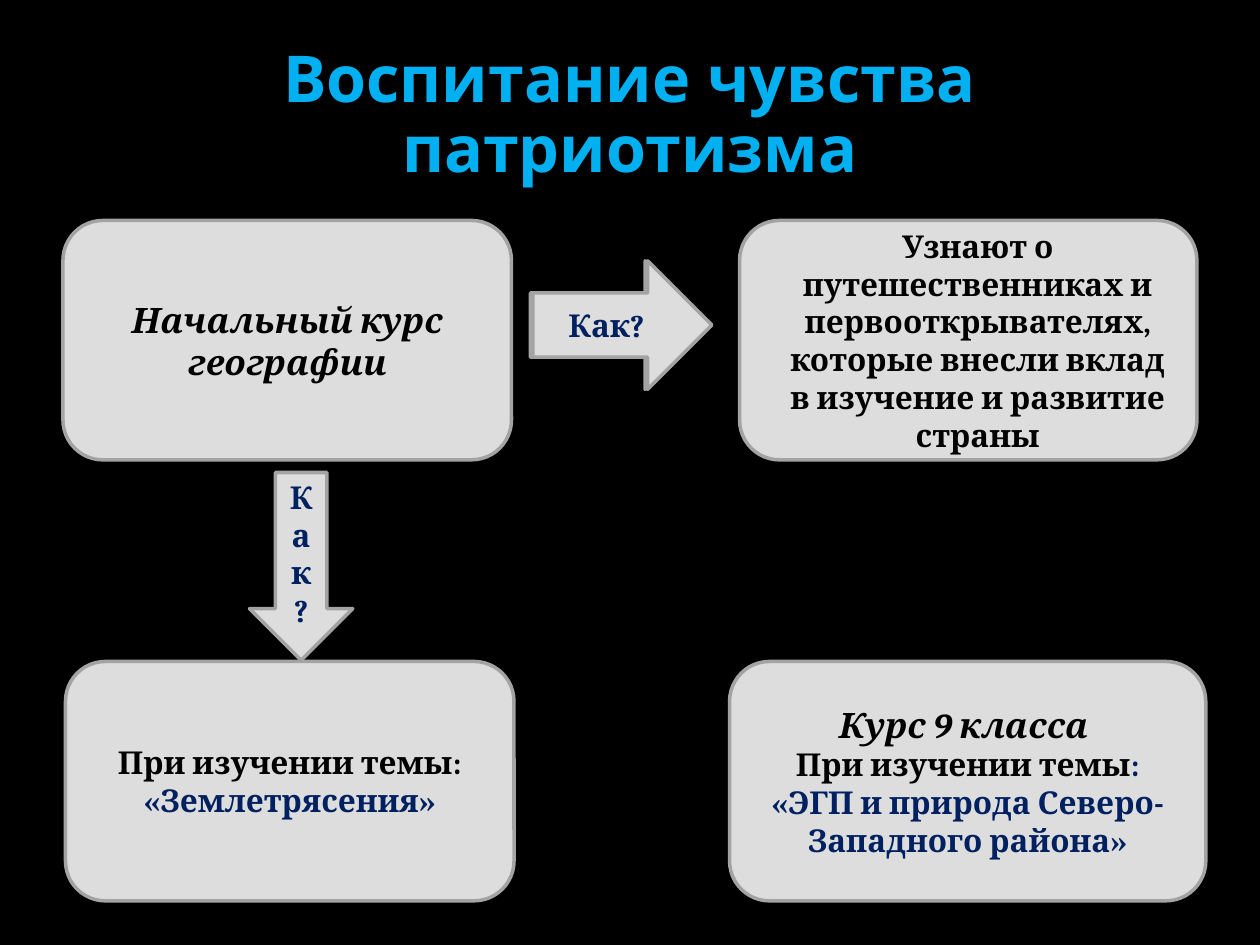
from dataclasses import dataclass

from pptx import Presentation
from pptx.dml.color import RGBColor
from pptx.enum.shapes import MSO_SHAPE as Preset
from pptx.enum.text import MSO_ANCHOR as Anchor, PP_ALIGN as Align
from pptx.util import Inches, Pt

# Grid: 100 columns by 75 rows of square cells
SLIDE_WIDTH, SLIDE_HEIGHT = Inches(10), Inches(7.5)
COLUMN, ROW = SLIDE_WIDTH / 100, SLIDE_HEIGHT / 75

BLACK, NAVY, SKY = "000000", "002060", "00B0F0"
PANEL, EDGE = "DDDDDD", "A3A3A3"
TOP_ROW, BOTTOM_ROW, CARD_ROWS = 17.5, 52.5, 19


@dataclass(frozen=True)
class Span:
    text: str
    color: str = BLACK


@dataclass(frozen=True)
class Para:
    spans: tuple[Span, ...]
    size: float = 18
    italic: bool = False
    font: str = "Cambria"


@dataclass(frozen=True)
class Block:
    preset: Preset
    column: float
    row: float
    columns: float
    rows: float
    paras: tuple[Para, ...]
    indent: float = 0


def rgb(color: str) -> RGBColor:
    return RGBColor.from_string(color)


def place(column: float, row: float, columns: float, rows: float) -> tuple[int, ...]:
    return (round(column * COLUMN), round(row * ROW),
            round(columns * COLUMN), round(rows * ROW))


def write(frame, paras: tuple[Para, ...]) -> None:
    frame.word_wrap = True
    frame.vertical_anchor = Anchor.MIDDLE
    for index, item in enumerate(paras):
        para = frame.add_paragraph() if index else frame.paragraphs[0]
        para.alignment = Align.CENTER
        para.font.name, para.font.size = item.font, Pt(item.size)
        para.font.bold, para.font.italic = True, item.italic
        for span in item.spans:
            run = para.add_run()
            run.text = span.text
            run.font.color.rgb = rgb(span.color)


def draw_block(page, block: Block) -> None:
    box = page.shapes.add_shape(
        block.preset, *place(block.column, block.row, block.columns, block.rows))
    box.shadow.inherit = False
    box.fill.solid()
    box.fill.fore_color.rgb = rgb(PANEL)
    box.line.color.rgb = rgb(EDGE)
    box.line.width = Pt(2)
    box.text_frame.margin_left += round(block.indent * COLUMN)
    write(box.text_frame, block.paras)


def draw_title(page, text: str) -> None:
    box = page.shapes.add_textbox(*place(5, 3, 90, 12.5))
    write(box.text_frame, (Para((Span(text, SKY),), 36.9, font="Noto Sans"),))
    box.text_frame.paragraphs[0].line_spacing = 0.9


def card(column: float, row: float, columns: float, *paras: Para,
         indent: float = 0) -> Block:
    return Block(Preset.ROUNDED_RECTANGLE, column, row, columns, CARD_ROWS, paras, indent)


QUESTION = (Para((Span("Как?", NAVY),)),)

BLOCKS = (
    # Upper cards: the course and what pupils learn
    card(5, TOP_ROW, 35.6,
         Para((Span("Начальный курс географии"),), 20, italic=True)),
    card(58.7, TOP_ROW, 36.3,
         Para((Span("Узнают о путешественниках и первооткрывателях, "
                    "которые внесли вклад в изучение и развитие страны"),)),
         indent=1.5),
    # Lower cards: topics
    card(5.2, BOTTOM_ROW, 35.6,
         Para((Span("При изучении темы: "), Span("«Землетрясения»", NAVY)))),
    card(57.9, BOTTOM_ROW, 37.8,
         Para((Span("Курс 9 класса "),), 20, italic=True),
         Para((Span("При изучении темы"),
               Span(": «ЭГП и природа Северо-Западного района»", NAVY)))),
    # Question arrows: a doubled one to the right, one down
    *(Block(Preset.RIGHT_ARROW, column, 20.7, 14.2, 10.2, QUESTION)
      for column in (42.1, 42.3)),
    Block(Preset.DOWN_ARROW, 19.8, 37.5, 8.2, 14.9, QUESTION),
)


def main() -> None:
    deck = Presentation()
    deck.slide_width, deck.slide_height = SLIDE_WIDTH, SLIDE_HEIGHT
    page = deck.slides.add_slide(deck.slide_layouts[6])
    page.background.fill.solid()
    page.background.fill.fore_color.rgb = rgb(BLACK)
    draw_title(page, "Воспитание чувства патриотизма")
    for block in BLOCKS:
        draw_block(page, block)
    deck.save("out.pptx")


if __name__ == "__main__":
    main()
